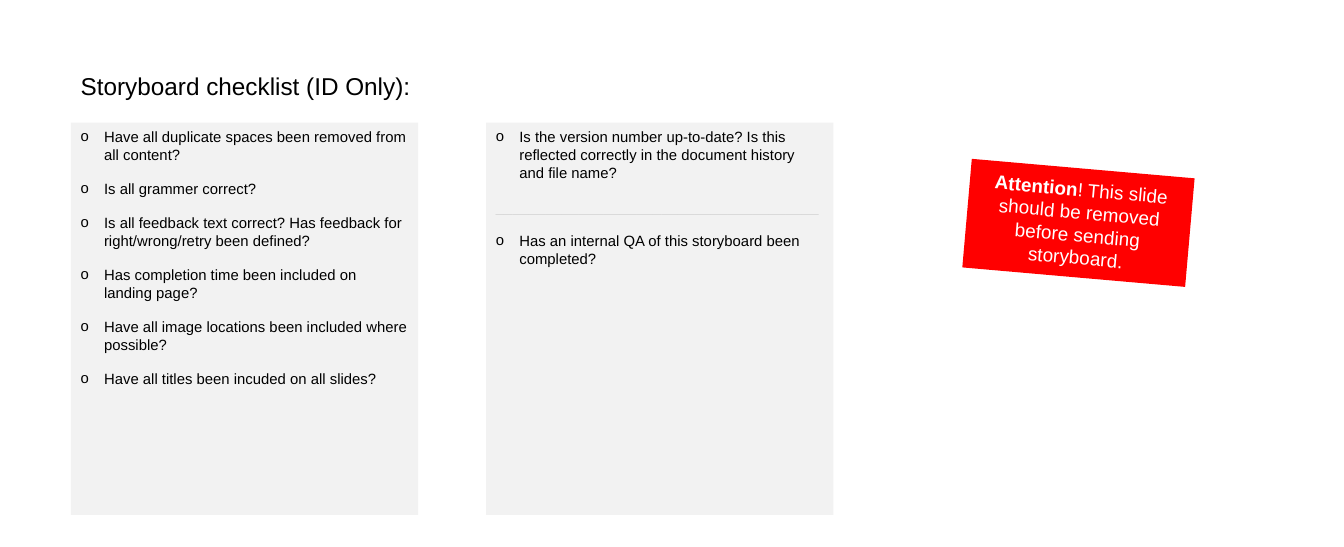
from lxml import etree
from pptx import Presentation
from pptx.dml.color import RGBColor
from pptx.enum.shapes import MSO_SHAPE
from pptx.enum.text import MSO_ANCHOR, MSO_AUTO_SIZE, PP_ALIGN
from pptx.oxml.ns import qn
from pptx.util import Inches, Pt

RECTANGLE = MSO_SHAPE.RECTANGLE
TOP, MIDDLE = MSO_ANCHOR.TOP, MSO_ANCHOR.MIDDLE
LEFT, CENTER = PP_ALIGN.LEFT, PP_ALIGN.CENTER
NO_FIT, FIT_SHAPE = MSO_AUTO_SIZE.NONE, MSO_AUTO_SIZE.SHAPE_TO_FIT_TEXT

TWO_CONTENT_LAYOUT = 3
FONT = "Arial"
COLORS = {
    "text": "000000",
    "panel": "F2F2F2",
    "divider": "D9D9D9",
    "alert": "FF0000",
    "alert_text": "FFFFFF",
}
DIVIDER = "_" * 39
CONTENT_CHECKS = [
    "Have all duplicate spaces been removed from all content?",
    "Is all grammer correct?",
    "Is all feedback text correct? Has feedback for right/wrong/retry been defined?",
    "Has completion time been included on landing page?",
    "Have all image locations been included where possible?",
    "Have all titles been incuded on all slides?",
]
RELEASE_CHECKS = [
    "Is the version number up-to-date? Is this reflected correctly in the "
    "document history and file name?",
    DIVIDER,
    "Has an internal QA of this storyboard been completed?",
]


def color(name):
    return RGBColor.from_string(COLORS[name])


def place(shape, left, top, width, height):
    shape.left, shape.top = Inches(left), Inches(top)
    shape.width, shape.height = Inches(width), Inches(height)


def fill_shape(shape, color_name):
    shape.fill.solid()
    shape.fill.fore_color.rgb = color(color_name)
    shape.line.fill.background()


def format_runs(paragraph, size, color_name):
    for run in paragraph.runs:
        run.font.name = FONT
        run.font.size = Pt(size)
        run.font.color.rgb = color(color_name)


def set_bullet(paragraph, character=None):
    """Give the paragraph a hanging bullet, or none without a character."""
    properties = paragraph._p.get_or_add_pPr()
    indent = Inches(0.24) if character else 0
    properties.set("marL", str(indent))
    properties.set("indent", str(-indent))
    if character:
        etree.SubElement(properties, qn("a:buFont"), typeface=FONT)
        etree.SubElement(properties, qn("a:buChar"), char=character)
    else:
        etree.SubElement(properties, qn("a:buNone"))


def format_title(title):
    place(title, 0.73, 0.68, 3.62, 0.4)
    text_frame = title.text_frame
    text_frame.text = "Storyboard checklist (ID Only):"
    text_frame.word_wrap = False
    text_frame.auto_size = FIT_SHAPE
    text_frame.vertical_anchor = TOP
    paragraph = text_frame.paragraphs[0]
    paragraph.alignment = LEFT
    format_runs(paragraph, 18, "text")


def format_checklist(body, left, items):
    place(body, left, 1.26, 3.57, 4.03)
    fill_shape(body, "panel")
    text_frame = body.text_frame
    text_frame.text = "\n".join(items)
    text_frame.auto_size = NO_FIT
    text_frame.vertical_anchor = TOP
    for paragraph in text_frame.paragraphs:
        is_divider = paragraph.text == DIVIDER
        paragraph.space_before = paragraph.space_after = Pt(6)
        set_bullet(paragraph, None if is_divider else "o")
        format_runs(paragraph, 11, "divider" if is_divider else "text")


def add_attention_note(slide):
    note = slide.shapes.add_shape(
        RECTANGLE, Inches(9.94), Inches(1.73), Inches(2.3), Inches(1.12))
    note.rotation = 5
    note.shadow.inherit = False
    fill_shape(note, "alert")
    text_frame = note.text_frame
    text_frame.word_wrap = True
    text_frame.vertical_anchor = MIDDLE
    paragraph = text_frame.paragraphs[0]
    paragraph.alignment = CENTER
    keyword = paragraph.add_run()
    keyword.text = "Attention"
    keyword.font.bold = True
    message = paragraph.add_run()
    message.text = "! This slide should be removed before sending storyboard."
    format_runs(paragraph, 14, "alert_text")


def main():
    presentation = Presentation()
    presentation.slide_width = Inches(13.82)
    presentation.slide_height = Inches(5.62)
    layout = presentation.slide_layouts[TWO_CONTENT_LAYOUT]
    slide = presentation.slides.add_slide(layout)
    title, content_list, release_list = slide.placeholders
    format_title(title)
    format_checklist(content_list, 0.73, CONTENT_CHECKS)
    format_checklist(release_list, 5, RELEASE_CHECKS)
    add_attention_note(slide)
    presentation.save("out.pptx")


if __name__ == "__main__":
    main()
